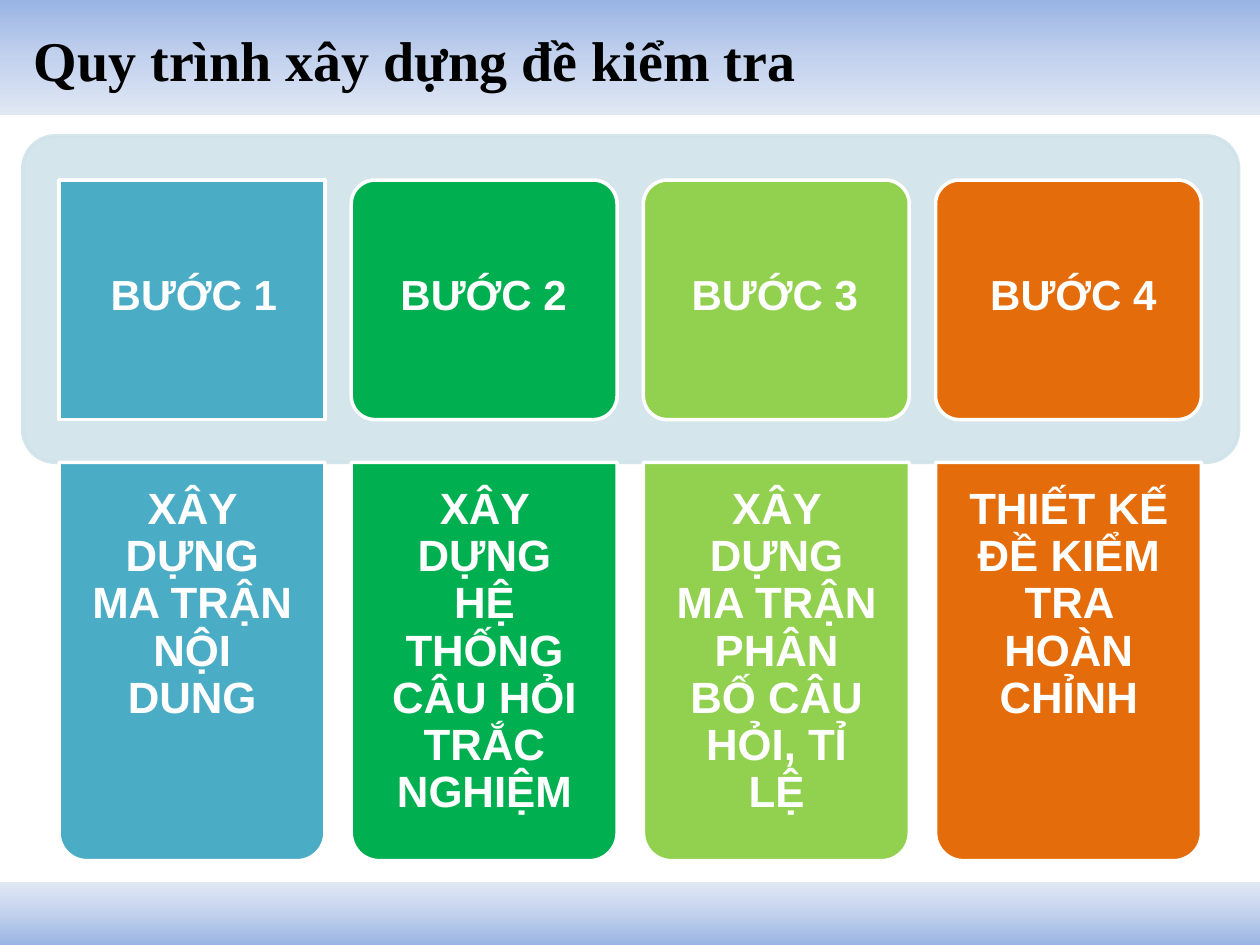
from copy import deepcopy

from pptx import Presentation
from pptx.dml.color import RGBColor
from pptx.enum.shapes import MSO_SHAPE
from pptx.enum.text import MSO_ANCHOR, PP_ALIGN
from pptx.oxml.ns import qn
from pptx.util import Cm, Pt
from lxml.etree import SubElement

WHITE = RGBColor(0xFF, 0xFF, 0xFF)
BLACK = RGBColor(0x00, 0x00, 0x00)
PANEL = RGBColor(0xD0, 0xE3, 0xEA)
TEAL = RGBColor(0x4B, 0xAC, 0xC6)
GREEN = RGBColor(0x00, 0xB0, 0x50)
LIME = RGBColor(0x92, 0xD0, 0x50)
ORANGE = RGBColor(0xE4, 0x6C, 0x0A)
BAND_COLORS = (
    RGBColor(0x9A, 0xB5, 0xE4),
    RGBColor(0xC2, 0xD1, 0xED),
    RGBColor(0xE1, 0xE8, 0xF5),
)

# Lengths in centimetres
SLIDE_WIDTH, SLIDE_HEIGHT = 25.4, 19.05
FIRST_LEFT, COLUMN_PITCH, COLUMN_WIDTH = 1.19, 5.89, 5.36
HEAD_TOP, HEAD_HEIGHT = 3.63, 4.83
BODY_TOP, BODY_HEIGHT = 9.32, 8.03

# Head shape, colour, label left, description
STEPS = (
    (MSO_SHAPE.RECTANGLE, TEAL, 1.27, "XÂY DỰNG MA TRẬN NỘI DUNG"),
    (MSO_SHAPE.ROUNDED_RECTANGLE, GREEN, 7.11,
     "XÂY DỰNG HỆ THỐNG CÂU HỎI TRẮC NGHIỆM"),
    (MSO_SHAPE.ROUNDED_RECTANGLE, LIME, 12.98,
     "XÂY DỰNG MA TRẬN PHÂN BỐ CÂU HỎI, TỈ LỆ"),
    (MSO_SHAPE.ROUNDED_RECTANGLE, ORANGE, 19.0,
     "THIẾT KẾ ĐỀ KIỂM TRA HOÀN CHỈNH"),
)


def add_band(slide, top, height, angle):
    """Full-width band fading from blue to pale blue."""
    band = slide.shapes.add_shape(
        MSO_SHAPE.RECTANGLE, Cm(0), Cm(top), Cm(SLIDE_WIDTH), Cm(height))
    band.shadow.inherit = False
    band.line.fill.background()
    band.fill.gradient()
    band.fill.gradient_angle = angle
    # A new gradient has two stops; add the middle one
    stop_list = next(band.element.iter(qn("a:gsLst")))
    stop_list.insert(1, deepcopy(stop_list[0]))
    for stop, position, color in zip(
            band.fill.gradient_stops, (0, 0.5, 1), BAND_COLORS):
        stop.position = position
        stop.color.rgb = color


def add_block(slide, kind, left, top, width, height, fill, line, adjustments=()):
    block = slide.shapes.add_shape(kind, Cm(left), Cm(top), Cm(width), Cm(height))
    block.shadow.inherit = False
    block.fill.solid()
    block.fill.fore_color.rgb = fill
    block.line.color.rgb = line
    block.line.width = Pt(2)
    for index, value in enumerate(adjustments):
        block.adjustments[index] = value
    return block


def set_opacity(shape, percent):
    for color in shape.element.spPr.iter(qn("a:srgbClr")):
        SubElement(color, qn("a:alpha"), val=str(percent * 1000))


def add_text(slide, text, left, top, width, height, size, color=WHITE,
             font="Arial", align=PP_ALIGN.CENTER, anchor=MSO_ANCHOR.TOP,
             inset=None, line_spacing=None):
    box = slide.shapes.add_textbox(Cm(left), Cm(top), Cm(width), Cm(height))
    frame = box.text_frame
    frame.word_wrap = True
    frame.vertical_anchor = anchor
    if inset is not None:
        frame.margin_left = frame.margin_right = Cm(inset)
        frame.margin_top = frame.margin_bottom = Cm(inset)
    paragraph = frame.paragraphs[0]
    paragraph.alignment = align
    paragraph.line_spacing = line_spacing
    run = paragraph.add_run()
    run.text = text
    run.font.name = font
    run.font.size = Pt(size)
    run.font.bold = True
    run.font.color.rgb = color


def add_step(slide, index, head_kind, color, label_left, description):
    """One column: head block, body block and their texts."""
    left = FIRST_LEFT + index * COLUMN_PITCH
    corners = () if head_kind == MSO_SHAPE.RECTANGLE else (0.1,)
    add_block(slide, head_kind, left, HEAD_TOP, COLUMN_WIDTH, HEAD_HEIGHT,
              color, WHITE, corners)
    body = add_block(slide, MSO_SHAPE.ROUND_2_SAME_RECTANGLE, left, BODY_TOP,
                     COLUMN_WIDTH, BODY_HEIGHT, color, WHITE, (0.105, 0))
    body.rotation = 180
    add_text(slide, description, left + 0.17, BODY_TOP, 5.03, 7.87, 25,
             inset=0.49, line_spacing=0.9)
    add_text(slide, f"BƯỚC {index + 1}", label_left, 5.28, 5.28, 1.27, 24)


def main():
    presentation = Presentation()
    presentation.slide_width = Cm(SLIDE_WIDTH)
    presentation.slide_height = Cm(SLIDE_HEIGHT)
    slide = presentation.slides.add_slide(presentation.slide_layouts[6])

    # Header and footer bands
    add_band(slide, 0, 2.33, 270)
    add_band(slide, 17.78, 1.27, 90)

    # Title
    add_text(slide, "Quy trình xây dựng đề kiểm tra", 0.43, 0.05, 24.56, 2.29,
             32, BLACK, "Times New Roman", PP_ALIGN.LEFT, MSO_ANCHOR.MIDDLE)

    # Panel behind the step heads
    panel = add_block(slide, MSO_SHAPE.ROUNDED_RECTANGLE, 0.46, 2.74, 24.51,
                      6.58, PANEL, PANEL, (0.1,))
    set_opacity(panel, 90)

    # Step columns
    for index, step in enumerate(STEPS):
        add_step(slide, index, *step)

    presentation.save("out.pptx")


if __name__ == "__main__":
    main()
